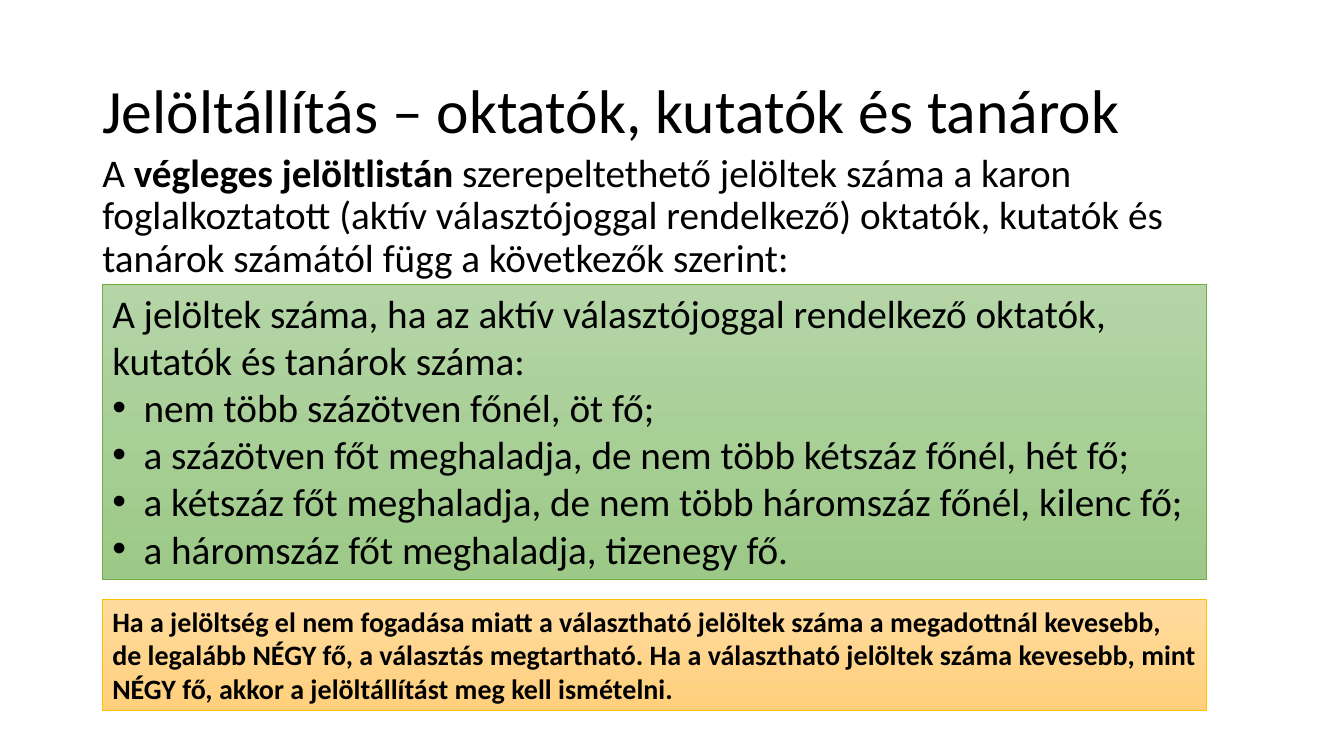
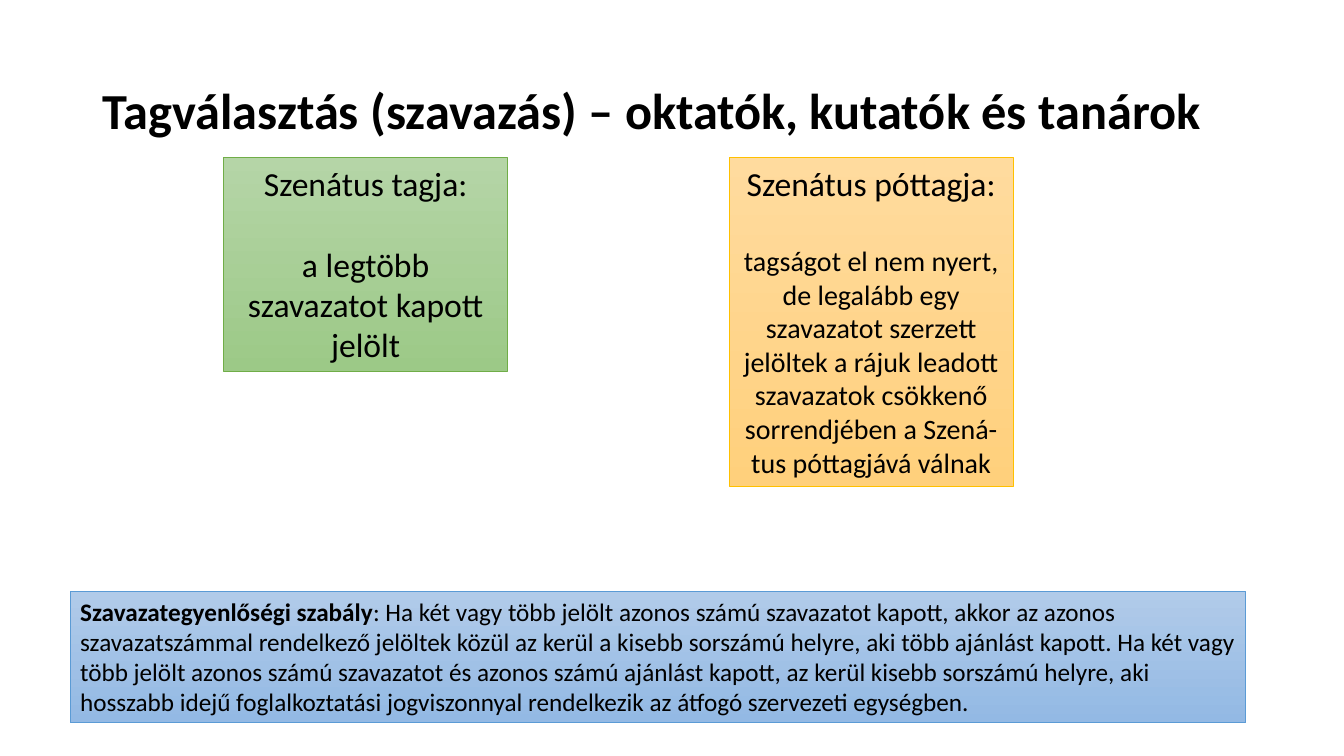
from lxml.etree import SubElement
from pptx import Presentation
from pptx.dml.color import RGBColor
from pptx.enum.shapes import MSO_SHAPE
from pptx.enum.text import MSO_ANCHOR, PP_ALIGN
from pptx.oxml.ns import qn
from pptx.util import Cm, Pt

FONT = "Calibri"
COLORS = {
    "text": "000000",
    "green": ("B5D5A7", "9CC987", "70AD47"),
    "orange": ("FFDB9E", "FFD07C", "FFC000"),
    "blue": ("B1CBE9", "93B9E4", "5B9BD5"),
}
BLANK_LAYOUT = 6
TEXT_LEFT, TEXT_WIDTH = 2.33, 29.21
PANEL_LEFT, PANEL_WIDTH = 2.58, 27.82
CARD_TOP, CARD_WIDTH = 3.97, 7.17
BULLET_INDENT = 0.79
CARD_GAP = 29


def add_run(paragraph, text, size, bold=False):
    run = paragraph.add_run()
    run.text = text
    run.font.name = FONT
    run.font.size = Pt(size)
    run.font.bold = bold
    run.font.color.rgb = RGBColor.from_string(COLORS["text"])


def next_paragraph(text_frame):
    first = text_frame.paragraphs[0]
    return text_frame.add_paragraph() if first.runs else first


def add_paragraph(text_frame, runs, size, align=PP_ALIGN.LEFT, before=0):
    paragraph = next_paragraph(text_frame)
    paragraph.alignment = align
    paragraph.space_before = Pt(before)
    for text, bold in runs:
        add_run(paragraph, text, size, bold)
    return paragraph


def add_bullet(text_frame, text, size):
    paragraph = add_paragraph(text_frame, [(text, False)], size)
    properties = paragraph._p.get_or_add_pPr()
    properties.set("marL", str(Cm(BULLET_INDENT)))
    properties.set("indent", str(-Cm(BULLET_INDENT)))
    SubElement(properties, qn("a:buFont"), typeface="Arial")
    SubElement(properties, qn("a:buChar"), char="•")


def add_text(slide, top, height, runs, size, anchor=MSO_ANCHOR.TOP):
    shape = slide.shapes.add_textbox(
        Cm(TEXT_LEFT), Cm(top), Cm(TEXT_WIDTH), Cm(height))
    text_frame = shape.text_frame
    text_frame.word_wrap = True
    text_frame.vertical_anchor = anchor
    add_paragraph(text_frame, runs, size).line_spacing = 0.9


def add_title(slide, text, size, bold=False):
    add_text(slide, 1.01, 3.68, [(text, bold)], size, MSO_ANCHOR.MIDDLE)


def add_panel(slide, left, top, width, height, color):
    shape = slide.shapes.add_shape(
        MSO_SHAPE.RECTANGLE, Cm(left), Cm(top), Cm(width), Cm(height))
    shape.shadow.inherit = False
    *stops, outline = COLORS[color]
    shape.fill.gradient()
    shape.fill.gradient_angle = 270
    for stop, shade in zip(shape.fill.gradient_stops, stops):
        stop.color.rgb = RGBColor.from_string(shade)
    shape.line.color.rgb = RGBColor.from_string(outline)
    shape.line.width = Pt(0.5)
    shape.text_frame.word_wrap = True
    shape.text_frame.vertical_anchor = MSO_ANCHOR.TOP
    return shape.text_frame


def add_card(slide, left, height, color, heading, body, body_size):
    text_frame = add_panel(slide, left, CARD_TOP, CARD_WIDTH, height, color)
    add_paragraph(text_frame, [(heading, False)], 24, PP_ALIGN.CENTER)
    add_paragraph(text_frame, [(body, False)], body_size, PP_ALIGN.CENTER, CARD_GAP)


def build_nomination(slide):
    add_title(slide, "Jelöltállítás – oktatók, kutatók és tanárok", 44)
    add_text(slide, 3.75, 3.5, [
        ("A ", False),
        ("végleges jelöltlistán ", True),
        ("szerepeltethető jelöltek száma a karon foglalkoztatott (aktív "
         "választójoggal rendelkező) oktatók, kutatók és tanárok számától "
         "függ a következők szerint:", False),
    ], 28)
    limits = add_panel(slide, PANEL_LEFT, 7.17, PANEL_WIDTH, 7.43, "green")
    add_paragraph(limits, [
        ("A jelöltek száma, ha az aktív választójoggal rendelkező oktatók, "
         "kutatók és tanárok száma:", False)], 28)
    for limit in (
        "nem több százötven főnél, öt fő;",
        "a százötven főt meghaladja, de nem több kétszáz főnél, hét fő;",
        "a kétszáz főt meghaladja, de nem több háromszáz főnél, kilenc fő;",
        "a háromszáz főt meghaladja, tizenegy fő.",
    ):
        add_bullet(limits, limit, 28)
    repeat_rule = add_panel(slide, PANEL_LEFT, 15.1, PANEL_WIDTH, 2.81, "orange")
    add_paragraph(repeat_rule, [
        ("Ha a jelöltség el nem fogadása miatt a választható jelöltek száma a "
         "megadottnál kevesebb, de legalább NÉGY fő, a választás megtartható. "
         "Ha a választható jelöltek száma kevesebb, mint NÉGY fő, akkor a "
         "jelöltállítást meg kell ismételni.", True)], 20)


def build_voting(slide):
    add_title(slide, "Tagválasztás (szavazás) – oktatók, kutatók és tanárok", 36, True)
    add_card(slide, 5.63, 5.39, "green", "Szenátus tagja:",
             "a legtöbb szavazatot kapott jelölt", 24)
    add_card(slide, 18.37, 8.28, "orange", "Szenátus póttagja:",
             "tagságot el nem nyert, de legalább egy szavazatot szerzett "
             "jelöltek a rájuk leadott szavazatok csökkenő sorrendjében a "
             "Szená-tus póttagjává válnak", 20)
    tie_rule = add_panel(slide, 1.77, 14.89, 29.62, 3.32, "blue")
    add_paragraph(tie_rule, [
        ("Szavazategyenlőségi szabály", True),
        (": Ha két vagy több jelölt azonos számú szavazatot kapott, akkor az "
         "azonos szavazatszámmal rendelkező jelöltek közül az kerül a kisebb "
         "sorszámú helyre, aki több ajánlást kapott. Ha két vagy több jelölt "
         "azonos számú szavazatot és azonos számú ajánlást kapott, az kerül "
         "kisebb sorszámú helyre, aki hosszabb idejű foglalkoztatási "
         "jogviszonnyal rendelkezik az átfogó szervezeti egységben.", False),
    ], 18)


def main():
    presentation = Presentation()
    presentation.slide_width = Cm(33.87)
    presentation.slide_height = Cm(19.05)
    for build in (build_nomination, build_voting):
        build(presentation.slides.add_slide(presentation.slide_layouts[BLANK_LAYOUT]))
    presentation.save("out.pptx")


if __name__ == "__main__":
    main()
